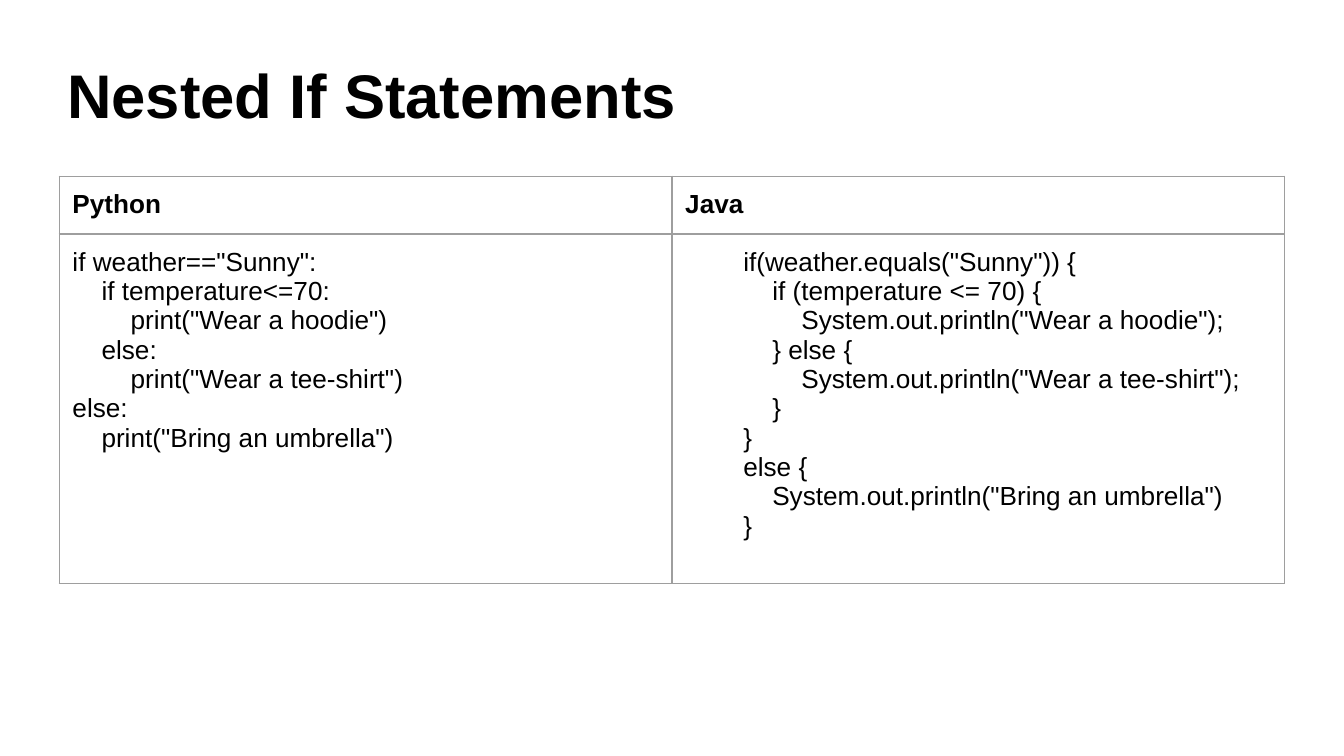
from dataclasses import dataclass

from lxml import etree
from pptx import Presentation
from pptx.dml.color import RGBColor
from pptx.enum.text import MSO_ANCHOR
from pptx.oxml.ns import qn
from pptx.util import Cm, Pt

MIDDLE = MSO_ANCHOR.MIDDLE


@dataclass(frozen=True)
class Theme:
    """Colours and type sizes of the slide."""
    font: str = "Arial"
    ink: str = "000000"
    paper: str = "FFFFFF"
    rule: str = "9E9E9E"
    title: float = 33
    body: float = 14
    line: float = 0.75


THEME = Theme()

PYTHON = '''if weather=="Sunny":
    if temperature<=70:
        print("Wear a hoodie")
    else:
        print("Wear a tee-shirt")
else:
    print("Bring an umbrella")'''

JAVA = '''        if(weather.equals("Sunny")) {
            if (temperature <= 70) {
                System.out.println("Wear a hoodie");
            } else {
                System.out.println("Wear a tee-shirt");
            }
        }
        else {
            System.out.println("Bring an umbrella")
        }'''


def style(frame, size, bold):
    """Set one font on all paragraphs of a text frame."""
    for para in frame.paragraphs:
        font = para.font
        font.name, font.size, font.bold = THEME.font, Pt(size), bold
        font.color.rgb = RGBColor.from_string(THEME.ink)


def add_title(slide, box, text):
    """Place the slide title, centred vertically in its box."""
    frame = slide.shapes.add_textbox(*box).text_frame
    frame.word_wrap = True
    frame.vertical_anchor = MIDDLE
    frame.text = text
    frame.paragraphs[0].line_spacing = 0.9
    style(frame, THEME.title, True)


def add_edges(cell):
    """Draw a thin line on all four sides of a cell."""
    props = cell._tc.get_or_add_tcPr()
    for spot, side in enumerate(("lnL", "lnR", "lnT", "lnB")):
        edge = etree.Element(qn(f"a:{side}"), w=str(Pt(THEME.line)))
        fill = etree.SubElement(edge, qn("a:solidFill"))
        etree.SubElement(fill, qn("a:srgbClr"), val=THEME.rule)
        props.insert(spot, edge)


def add_code(slide, box, head, rows):
    """Place a table of code samples with a header row that takes the given height."""
    left, top, width, height = box
    cols = len(rows[0])
    table = slide.shapes.add_table(len(rows), cols, left, top, width, height).table
    table.horz_banding = False
    table.rows[0].height = head
    table.rows[1].height = height - head
    for col in table.columns:
        col.width = width // cols
    for r, row in enumerate(rows):
        for c, text in enumerate(row):
            cell = table.cell(r, c)
            cell.text = text
            cell.margin_left = cell.margin_right = Cm(0.25)
            cell.margin_top = cell.margin_bottom = Cm(0.25)
            cell.fill.background()
            add_edges(cell)
            style(cell.text_frame, THEME.body, r == 0)


def main():
    """Build and save the slide."""
    deck = Presentation()
    deck.slide_width, deck.slide_height = Cm(25.4), Cm(14.29)
    slide = deck.slides.add_slide(deck.slide_layouts[6])
    fill = slide.background.fill
    fill.solid()
    fill.fore_color.rgb = RGBColor.from_string(THEME.paper)
    add_title(slide, (Cm(1.02), Cm(1.07), Cm(23.4), Cm(1.6)), "Nested If Statements")
    add_code(slide, (Cm(1.12), Cm(3.33), Cm(23.16), Cm(7.67)), Cm(1.06),
             (("Python", "Java"), (PYTHON, JAVA)))
    deck.save("out.pptx")


if __name__ == "__main__":
    main()
